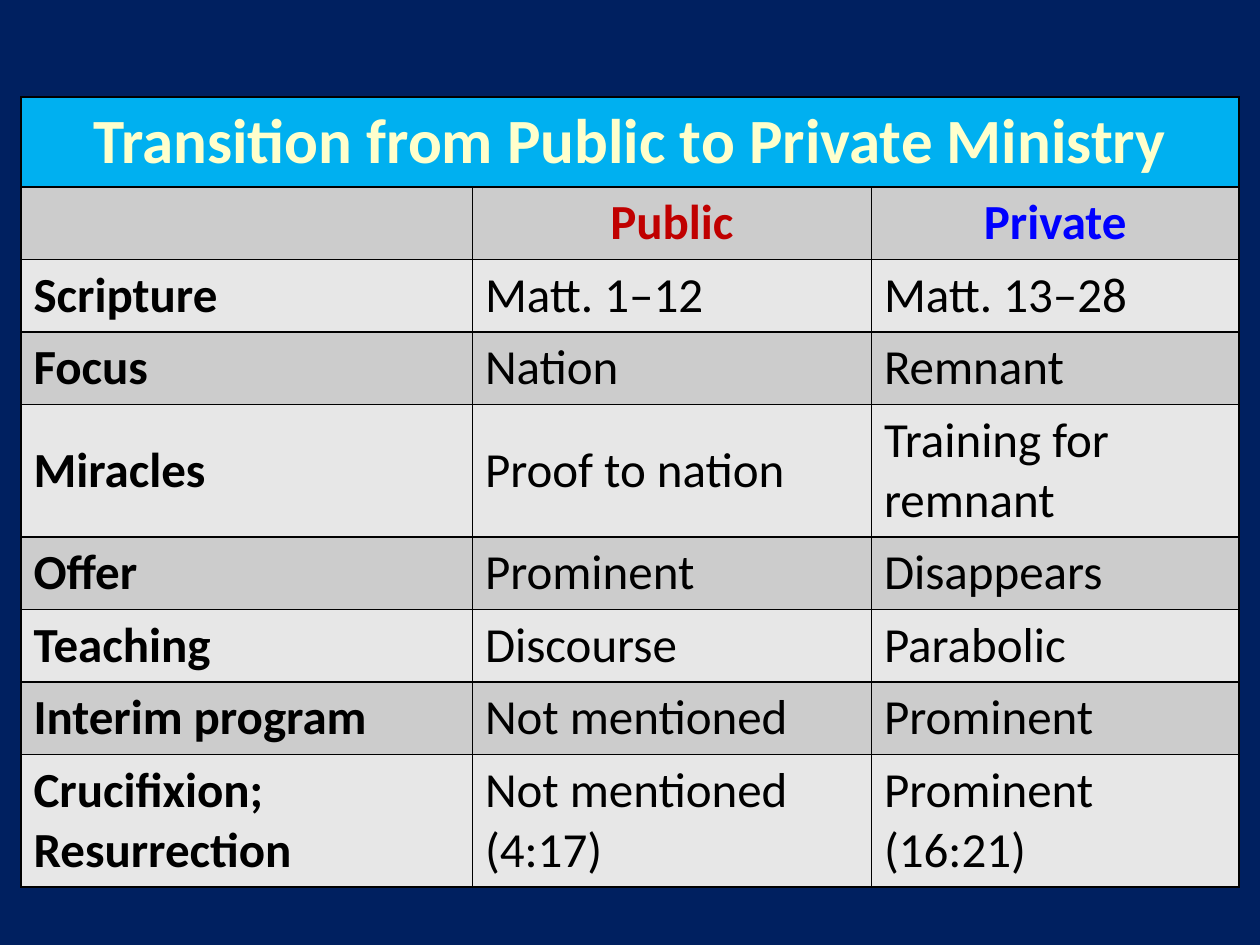
from lxml import etree
from pptx import Presentation
from pptx.dml.color import RGBColor
from pptx.enum.text import MSO_ANCHOR, PP_ALIGN
from pptx.oxml.ns import qn
from pptx.util import Pt

CENTER, LEFT = PP_ALIGN.CENTER, PP_ALIGN.LEFT
MIDDLE = MSO_ANCHOR.MIDDLE

NAVY = RGBColor(0x00, 0x20, 0x60)
SKY = RGBColor(0x00, 0xB0, 0xF0)
CREAM = RGBColor(0xFF, 0xFF, 0xCC)
RED = RGBColor(0xC0, 0x00, 0x00)
BLUE = RGBColor(0x00, 0x00, 0xFF)
BLACK = RGBColor(0x00, 0x00, 0x00)
DARK_BAND = RGBColor(0xCC, 0xCC, 0xCC)
LIGHT_BAND = RGBColor(0xE7, 0xE7, 0xE7)

HEADING = "Transition from Public to Private Ministry"
PHASES = ["", "Public", "Private"]
PHASE_COLORS = [BLACK, RED, BLUE]
COMPARISON = [
    ["Scripture", "Matt. 1–12", "Matt. 13–28"],
    ["Focus", "Nation", "Remnant"],
    ["Miracles", "Proof to nation", "Training for remnant"],
    ["Offer", "Prominent", "Disappears"],
    ["Teaching", "Discourse", "Parabolic"],
    ["Interim program", "Not mentioned", "Prominent"],
    ["Crucifixion; Resurrection", "Not mentioned (4:17)", "Prominent (16:21)"],
]
COLUMN_WIDTHS = [258, 228, 210]
HEADING_HEIGHT, LINE_ROW, WRAPPED_ROW = 51.4, 41.4, 75.4
WRAPPED_TOPICS = {"Miracles", "Crucifixion; Resurrection"}


class SlideBuilder:
    font_name = "Calibri"
    body_size = 28
    heading_size = 36
    border_width = 1

    def __init__(self, slide):
        self.slide = slide

    def background(self, color):
        fill = self.slide.background.fill
        fill.solid()
        fill.fore_color.rgb = color

    def table(self, left, top, widths, heights):
        frame = self.slide.shapes.add_table(
            len(heights), len(widths), Pt(left), Pt(top), Pt(sum(widths)), Pt(sum(heights))
        )
        for column, width in zip(frame.table.columns, widths):
            column.width = Pt(width)
        for row, height in zip(frame.table.rows, heights):
            row.height = Pt(height)
        return frame.table

    def borders(self, cell):
        properties = cell._tc.get_or_add_tcPr()
        for side in ("lnL", "lnR", "lnT", "lnB"):
            line = etree.SubElement(properties, qn(f"a:{side}"), w=str(Pt(self.border_width)))
            fill = etree.SubElement(line, qn("a:solidFill"))
            etree.SubElement(fill, qn("a:srgbClr"), val=str(BLACK))

    def cell(self, cell, text, band, color=BLACK, bold=True, align=LEFT, size=body_size):
        self.borders(cell)
        cell.fill.solid()
        cell.fill.fore_color.rgb = band
        cell.vertical_anchor = MIDDLE
        cell.text_frame.text = text
        paragraph = cell.text_frame.paragraphs[0]
        paragraph.alignment = align
        font = paragraph.font
        for run in paragraph.runs:
            font = run.font
        font.name = self.font_name
        font.size = Pt(size)
        font.bold = bold
        font.color.rgb = color


def main():
    presentation = Presentation()
    presentation.slide_width, presentation.slide_height = Pt(720), Pt(540)
    builder = SlideBuilder(presentation.slides.add_slide(presentation.slide_layouts[6]))
    builder.background(NAVY)

    heights = [HEADING_HEIGHT, LINE_ROW]
    heights += [WRAPPED_ROW if topic in WRAPPED_TOPICS else LINE_ROW for topic, *_ in COMPARISON]
    ministry = builder.table(12, 55.4, COLUMN_WIDTHS, heights)

    last = len(COLUMN_WIDTHS) - 1
    ministry.cell(0, 0).merge(ministry.cell(0, last))
    for column in range(len(COLUMN_WIDTHS)):
        heading = HEADING if column == 0 else ""
        builder.cell(ministry.cell(0, column), heading, SKY, CREAM,
                     align=CENTER, size=builder.heading_size)

    for column, (phase, color) in enumerate(zip(PHASES, PHASE_COLORS)):
        builder.cell(ministry.cell(1, column), phase, DARK_BAND, color, align=CENTER)

    for row, entries in enumerate(COMPARISON, start=2):
        band = DARK_BAND if row % 2 else LIGHT_BAND
        for column, entry in enumerate(entries):
            builder.cell(ministry.cell(row, column), entry, band, bold=column == 0)

    presentation.save("out.pptx")


if __name__ == "__main__":
    main()
